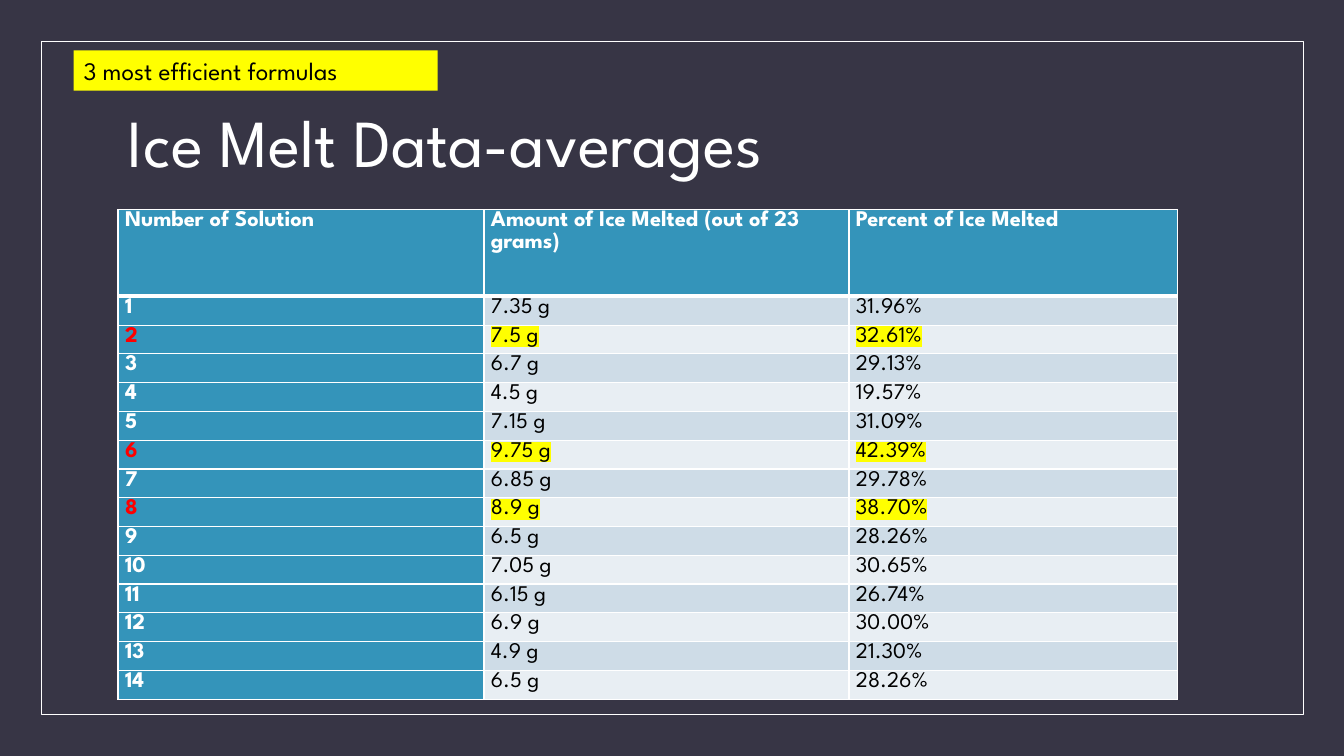
import pptx
import pptx.dml.color
import pptx.enum.shapes
import pptx.enum.text
import pptx.oxml.ns
import pptx.util
from lxml import etree

Inches = pptx.util.Inches
Pt = pptx.util.Pt
qn = pptx.oxml.ns.qn
ANCHOR = pptx.enum.text.MSO_ANCHOR
RECT = pptx.enum.shapes.MSO_SHAPE.RECTANGLE

FONT = "League Spartan"
COLORS = {
    "back": "373545", "white": "FFFFFF", "black": "000000", "red": "FF0000",
    "yellow": "FFFF00", "blue": "3494BA", "odd": "CEDCE7", "even": "E8EEF3",
}
HEADS = ["Number of Solution", "Amount of Ice Melted (out of 23 grams)",
         "Percent of Ice Melted"]
TOTAL = 23
MELTED = [7.35, 7.5, 6.7, 4.5, 7.15, 9.75, 6.85, 8.9, 6.5, 7.05, 6.15, 6.9, 4.9, 6.5]
BEST = sorted(MELTED)[-3:]


def tint(name):
    """Return the named colour."""
    return pptx.dml.color.RGBColor.from_string(COLORS[name])


def write(frame, text, size=16, color="black", bold=False, space=None, mark=None):
    """Write one formatted line of text into a frame."""
    para = frame.paragraphs[0]
    para.alignment = pptx.enum.text.PP_ALIGN.LEFT
    if space:
        para.line_spacing = space
    run = para.add_run()
    run.text = text
    font = run.font
    font.name, font.size, font.bold = FONT, Pt(size), bold
    font.color.rgb = tint(color)
    if mark:
        light = etree.Element(qn("a:highlight"))
        etree.SubElement(light, qn("a:srgbClr"), val=COLORS[mark])
        run._r.rPr.find(qn("a:solidFill")).addnext(light)


def edge(cell, foot):
    """Draw white borders around a cell, with the given width at its foot."""
    props = cell._tc.get_or_add_tcPr()
    sides = [("L", 1), ("R", 1), ("T", 1), ("B", foot)]
    for spot, (side, width) in enumerate(sides):
        line = etree.Element(qn(f"a:ln{side}"), w=str(Pt(width)))
        fill = etree.SubElement(line, qn("a:solidFill"))
        etree.SubElement(fill, qn("a:srgbClr"), val=COLORS["white"])
        props.insert(spot, line)


def fill_cell(cell, text, fill, foot=1, **style):
    """Fill one table cell with colour, borders and text."""
    cell.margin_left = cell.margin_right = Inches(0.07)
    cell.margin_top = cell.margin_bottom = 0
    cell.fill.solid()
    cell.fill.fore_color.rgb = tint(fill)
    edge(cell, foot)
    write(cell.text_frame, text, space=1.07, **style)


def add_frame(slide, left, top, width, height):
    """Add the thin white outline."""
    box = slide.shapes.add_shape(RECT, left, top, width, height)
    box.shadow.inherit = False
    box.fill.background()
    box.line.color.rgb = tint("white")
    box.line.width = Pt(0.5)


def add_title(slide, left, top, width, height):
    """Add the slide title."""
    frame = slide.shapes.add_textbox(left, top, width, height).text_frame
    frame.word_wrap = True
    frame.vertical_anchor = ANCHOR.MIDDLE
    write(frame, "Ice Melt Data-averages", size=48, color="white", space=0.9)


def add_data(slide, left, top, width, height):
    """Add the table of melted ice, with the best results marked."""
    rows = len(MELTED) + 1
    table = slide.shapes.add_table(rows, len(HEADS), left, top, width, height).table
    for col, share in zip(table.columns, [3.63, 3.62, 3.26]):
        col.width = int(width * share / 10.51)
    head = Inches(0.86)
    for row in table.rows:
        row.height = int((height - head) / len(MELTED))
    table.rows[0].height = head
    for col, text in enumerate(HEADS):
        fill_cell(table.cell(0, col), text, "blue", foot=3, color="white", bold=True)
    for num, grams in enumerate(MELTED, 1):
        best = grams in BEST
        fill_cell(table.cell(num, 0), str(num), "blue",
                  color="red" if best else "white", bold=True)
        band = "odd" if num % 2 else "even"
        for col, text in enumerate([f"{grams} g", f"{grams / TOTAL:.2%}"], 1):
            fill_cell(table.cell(num, col), text, band,
                      mark="yellow" if best else None)


def add_key(slide, left, top, width, height):
    """Add the yellow key to the marked rows."""
    box = slide.shapes.add_shape(RECT, left, top, width, height)
    box.shadow.inherit = False
    box.fill.solid()
    box.fill.fore_color.rgb = tint("yellow")
    box.line.fill.background()
    box.text_frame.word_wrap = True
    box.text_frame.vertical_anchor = ANCHOR.TOP
    write(box.text_frame, "3 most efficient formulas", size=18)


def main():
    """Build and save the slide."""
    deck = pptx.Presentation()
    deck.slide_width, deck.slide_height = Inches(13.33), Inches(7.5)
    slide = deck.slides.add_slide(deck.slide_layouts[6])
    slide.background.fill.solid()
    slide.background.fill.fore_color.rgb = tint("back")
    add_frame(slide, *map(Inches, (0.41, 0.41, 12.52, 6.68)))
    add_title(slide, *map(Inches, (1.17, 0.7, 11, 1.5)))
    add_data(slide, *map(Inches, (1.17, 2.08, 10.51, 4.71)))
    add_key(slide, *map(Inches, (0.73, 0.5, 3.61, 0.4)))
    deck.save("out.pptx")


if __name__ == "__main__":
    main()
